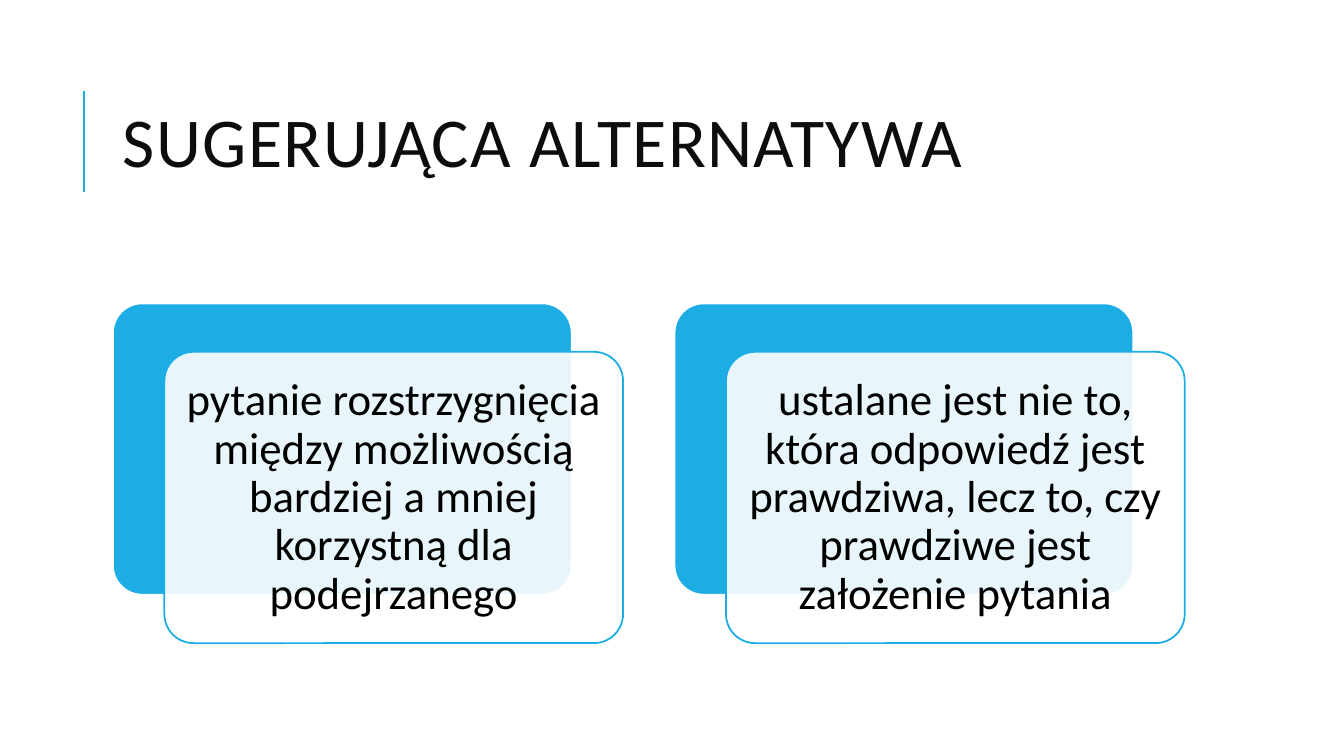
from lxml.etree import SubElement
from pptx import Presentation
from pptx.dml.color import RGBColor
from pptx.enum.shapes import MSO_CONNECTOR, MSO_SHAPE
from pptx.enum.text import MSO_ANCHOR, PP_ALIGN
from pptx.oxml.ns import qn
from pptx.util import Inches, Pt

BLUE = "1CADE4"
WHITE = "FFFFFF"
CARD_WIDTH, CARD_HEIGHT = 4.55, 2.89
CARD_LEFT, CARD_TOP, CARD_STEP = 1.12, 3.01, 5.57
CARDS = [
    "pytanie rozstrzygnięcia między możliwością bardziej a mniej korzystną dla podejrzanego",
    "ustalane jest nie to, która odpowiedź jest prawdziwa, lecz to, czy prawdziwe jest założenie pytania",
]


def color(value):
    return RGBColor.from_string(value)


def add_text(page, text, left, top, width, height, *, size, hue="000000",
             align=PP_ALIGN.LEFT, line_spacing=0.9, inset=0.1, tracking=0):
    box = page.shapes.add_textbox(Inches(left), Inches(top), Inches(width), Inches(height))
    frame = box.text_frame
    frame.word_wrap = True
    frame.vertical_anchor = MSO_ANCHOR.MIDDLE
    frame.margin_left = frame.margin_right = Inches(inset)
    frame.margin_top = frame.margin_bottom = Inches(inset)
    para = frame.paragraphs[0]
    para.alignment = align
    para.line_spacing = line_spacing
    span = para.add_run()
    span.text = text
    span.font.name = "Calibri"
    span.font.size = Pt(size)
    span.font.color.rgb = color(hue)
    if tracking:
        span._r.get_or_add_rPr().set("spc", str(tracking * 100))


def add_panel(page, left, top, *, fill, line, opacity=100):
    panel = page.shapes.add_shape(MSO_SHAPE.ROUNDED_RECTANGLE, Inches(left), Inches(top),
                                  Inches(CARD_WIDTH), Inches(CARD_HEIGHT))
    panel.adjustments[0] = 0.1
    panel.shadow.inherit = False
    panel.fill.solid()
    panel.fill.fore_color.rgb = color(fill)
    panel.line.color.rgb = color(line)
    panel.line.width = Pt(1.25)
    if opacity < 100:
        shade = panel._element.spPr.find(qn("a:solidFill")).find(qn("a:srgbClr"))
        SubElement(shade, qn("a:alpha")).set("val", str(opacity * 1000))


def add_rule(page, left, top, bottom):
    rule = page.shapes.add_connector(MSO_CONNECTOR.STRAIGHT, Inches(left), Inches(bottom),
                                     Inches(left), Inches(top))
    rule.line.color.rgb = color(BLUE)
    rule.line.width = Pt(1.5)
    SubElement(rule._element.spPr, qn("a:effectLst"))


def add_card(page, text, left, top):
    add_panel(page, left, top, fill=BLUE, line=WHITE)
    add_panel(page, left + 0.51, top + 0.48, fill=WHITE, line=BLUE, opacity=90)
    add_text(page, text, left + 0.59, top + 0.57, 4.39, 2.72, size=32,
             align=PP_ALIGN.CENTER, inset=0.12)


def main():
    deck = Presentation()
    deck.slide_width, deck.slide_height = Inches(13.33), Inches(7.5)
    page = deck.slides.add_slide(deck.slide_layouts[6])

    # Heading with its vertical rule
    add_rule(page, 0.83, 0.9, 1.9)
    add_text(page, "SUGERUJĄCA ALTERNATYWA", 1.12, 0.64, 10.63, 1.64, size=50,
             hue="0D0D0D", line_spacing=0.8, tracking=1)

    # Two layered cards
    for index, text in enumerate(CARDS):
        add_card(page, text, CARD_LEFT + index * CARD_STEP, CARD_TOP)

    deck.save("out.pptx")


if __name__ == "__main__":
    main()
